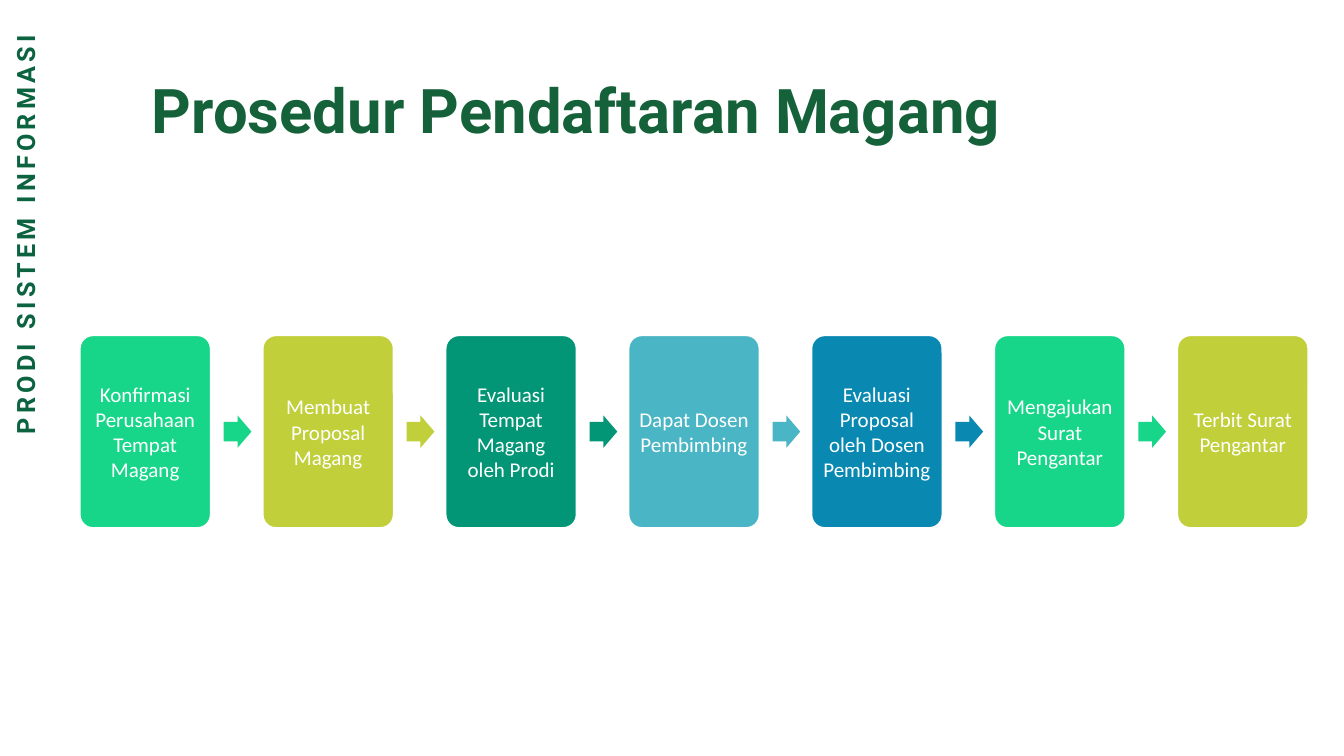
from pptx import Presentation
from pptx import util as u
from pptx.dml import color
from pptx.enum import shapes, text

GREEN, LIME, TEAL, SKY, BLUE = "18D689", "C0CF3A", "029676", "4AB5C4", "0989B1"
STEPS = [
    ("Konfirmasi Perusahaan Tempat Magang", GREEN),
    ("Membuat Proposal Magang", LIME),
    ("Evaluasi Tempat Magang oleh Prodi", TEAL),
    ("Dapat Dosen Pembimbing", SKY),
    ("Evaluasi Proposal oleh Dosen Pembimbing", BLUE),
    ("Mengajukan Surat Pengantar", GREEN),
    ("Terbit Surat Pengantar", LIME),
]
FIRST_LEFT, STEP_PITCH = 57.1, 130.66
CARD_TOP, CARD_WIDTH, CARD_HEIGHT = 239.6, 93.3, 137.4
ARROW_OFFSET, ARROW_WIDTH, ARROW_HEIGHT = 102.7, 19.8, 23.1


def rgb(value):
    return color.RGBColor.from_string(value)


class SlideBuilder:
    heading_font = "Roboto"
    body_font = "Calibri"
    white = "FFFFFF"

    def __init__(self, slide):
        self.slide = slide

    def fill_text(self, frame, words, font, size, ink, bold=False,
                  align=text.PP_ALIGN.CENTER):
        frame.text = words
        frame.word_wrap = True
        frame.vertical_anchor = text.MSO_ANCHOR.MIDDLE
        paragraph = frame.paragraphs[0]
        paragraph.alignment = align
        run = paragraph.runs[0]
        run.font.name = font
        run.font.size = u.Pt(size)
        run.font.bold = bold
        run.font.color.rgb = rgb(ink)
        return paragraph

    def text_box(self, left, top, width, height):
        box = self.slide.shapes.add_textbox(
            u.Pt(left), u.Pt(top), u.Pt(width), u.Pt(height))
        return box.text_frame

    def title(self, words):
        frame = self.text_box(66.2, 28.8, 691.2, 104.4)
        paragraph = self.fill_text(
            frame, words, self.heading_font, 44, "15623A", bold=True)
        paragraph.line_spacing = 0.9

    def side_label(self, words):
        frame = self.text_box(0, 18, 36, 482.4)
        paragraph = self.fill_text(
            frame, words, self.heading_font, 18, "0B6340", bold=True,
            align=text.PP_ALIGN.RIGHT)
        frame._txBody.bodyPr.set("vert", "vert270")
        paragraph.runs[0]._r.get_or_add_rPr().set("spc", "300")

    def filled_shape(self, kind, left, top, width, height, fill):
        shape = self.slide.shapes.add_shape(
            kind, u.Pt(left), u.Pt(top), u.Pt(width), u.Pt(height))
        shape.shadow.inherit = False
        shape.fill.solid()
        shape.fill.fore_color.rgb = rgb(fill)
        return shape

    def card(self, left, words, fill):
        shape = self.filled_shape(
            shapes.MSO_SHAPE.ROUNDED_RECTANGLE,
            left, CARD_TOP, CARD_WIDTH, CARD_HEIGHT, fill)
        shape.adjustments[0] = 0.1
        shape.line.color.rgb = rgb(self.white)
        shape.line.width = u.Pt(1)
        frame = shape.text_frame
        frame.margin_left = frame.margin_right = u.Pt(4.5)
        frame.margin_top = frame.margin_bottom = u.Pt(4.5)
        self.fill_text(frame, words, self.body_font, 15, self.white)

    def arrow(self, left, fill):
        top = CARD_TOP + (CARD_HEIGHT - ARROW_HEIGHT) / 2
        shape = self.filled_shape(
            shapes.MSO_SHAPE.RIGHT_ARROW,
            left, top, ARROW_WIDTH, ARROW_HEIGHT, fill)
        shape.adjustments[0] = 0.6
        shape.adjustments[1] = 0.5
        shape.line.fill.background()


def main():
    presentation = Presentation()
    presentation.slide_width = u.Pt(960)
    presentation.slide_height = u.Pt(540)
    builder = SlideBuilder(
        presentation.slides.add_slide(presentation.slide_layouts[6]))
    builder.side_label("PRODI SISTEM INFORMASI")
    builder.title("Prosedur Pendaftaran Magang")
    for index, (words, fill) in enumerate(STEPS):
        left = FIRST_LEFT + index * STEP_PITCH
        builder.card(left, words, fill)
        if index < len(STEPS) - 1:
            builder.arrow(left + ARROW_OFFSET, fill)
    presentation.save("out.pptx")


if __name__ == "__main__":
    main()
